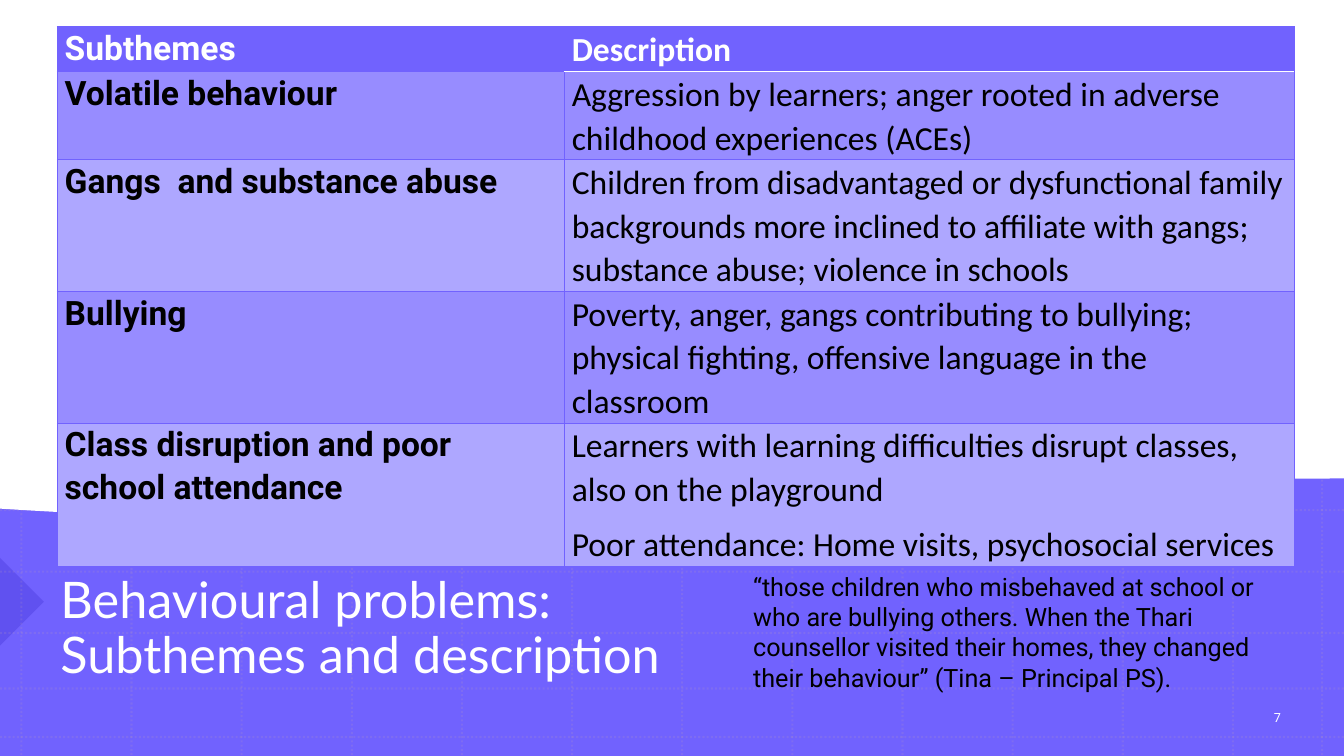
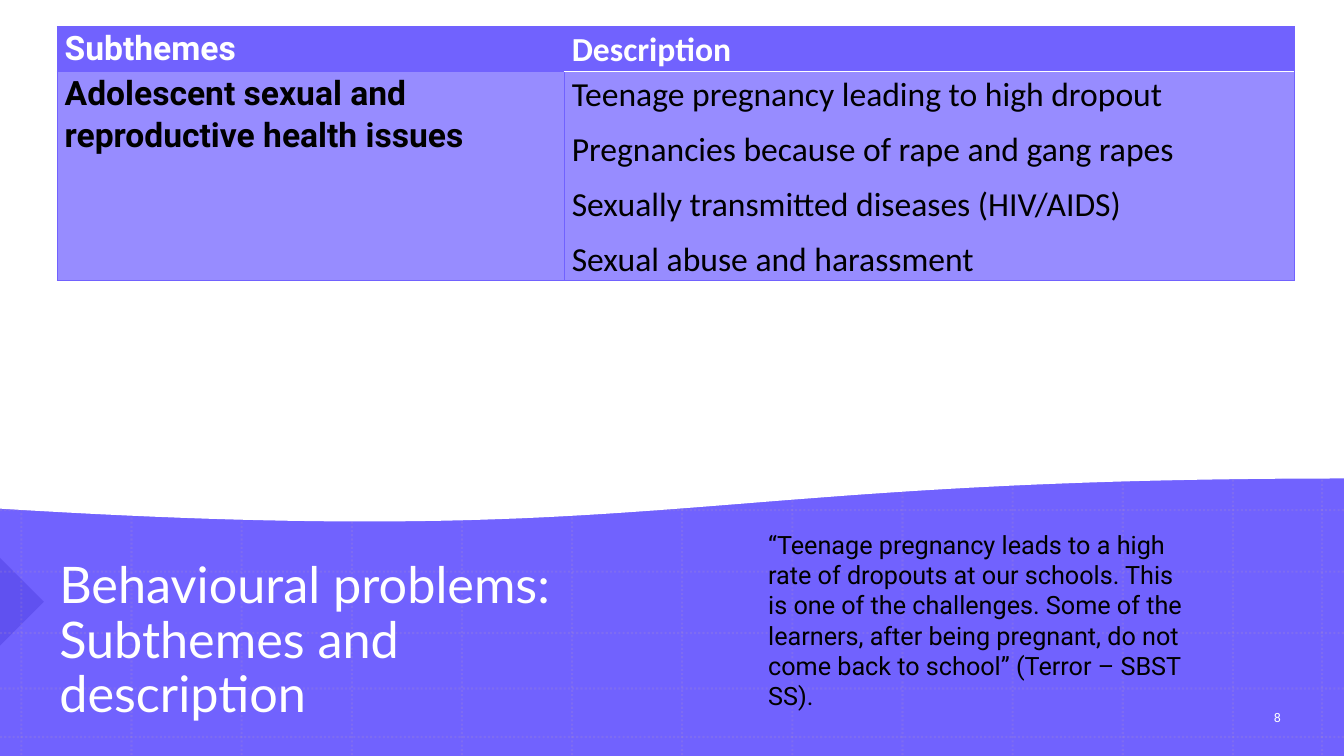
from lxml.etree import SubElement
from pptx import Presentation
from pptx.dml.color import RGBColor
from pptx.enum.dml import MSO_LINE
from pptx.enum.shapes import MSO_CONNECTOR, MSO_SHAPE
from pptx.enum.text import MSO_ANCHOR, MSO_AUTO_SIZE, PP_ALIGN
from pptx.oxml.ns import qn
from pptx.util import Cm, Pt

COLORS = {
    "purple": "7162FE",
    "dark_row": "978CFF",
    "light_row": "AEA7FF",
    "marker": "1201AF",
    "grid": "B495C2",
    "white": "FFFFFF",
    "black": "000000",
}
WIDTH, HEIGHT = 33.87, 19.05
WAVE = [(33.9, 12.04), (17.02, 12.04), (16.92, 13.84), (0, 12.8)]
WAVE_STEPS = 60
GRID_COLUMNS = [0.54 + 30.53 / 11 * i for i in range(12)] + [33.32]
GRID_ROWS = [0.48 + 15.47 / 10 * i for i in range(11)] + [17.35, 18.57]
COLUMN_WIDTHS = [12.78, 18.39]
HEADER_HEIGHT = 1.13

TITLE = ["Behavioural problems:", "Subthemes and description"]
HEADER = ["Subthemes", ["Description"]]

# Each row: subtheme, description paragraphs, height in cm
SLIDES = [
    {
        "number": 7,
        "title_box": (1.27, 13.66, 16.71, 4.42),
        "quote_box": (18.73, 14.27, 13.46, 3.33),
        "quote": "“those children who misbehaved at school or who are bullying others. "
                 "When the Thari counsellor visited their homes, they changed their "
                 "behaviour” (Tina – Principal PS).",
        "rows": [
            ("Volatile behaviour",
             ["Aggression by learners; anger rooted in adverse childhood "
              "experiences (ACEs)"], 2.22),
            ("Gangs  and substance abuse",
             ["Children from disadvantaged or dysfunctional family backgrounds more "
              "inclined to affiliate with gangs; substance abuse; violence in schools"], 3.32),
            ("Bullying",
             ["Poverty, anger, gangs contributing to bullying; physical fighting, "
              "offensive language in the classroom"], 3.32),
            ("Class disruption and poor school attendance",
             ["Learners with learning difficulties disrupt classes, also on the playground",
              "Poor attendance: Home visits, psychosocial services"], 3.6),
        ],
    },
    {
        "number": 8,
        "title_box": (1.24, 13.96, 14.99, 4.42),
        "quote_box": (19.11, 13.21, 10.97, 4.88),
        "quote": "“Teenage pregnancy leads to a high rate of dropouts at our schools. "
                 "This is one of the challenges. Some of the learners, after being "
                 "pregnant, do not come back to school” (Terror – SBST SS).",
        "rows": [
            ("Adolescent sexual and reproductive health issues",
             ["Teenage pregnancy leading to high dropout",
              "Pregnancies because of rape and gang rapes",
              "Sexually transmitted diseases (HIV/AIDS)",
              "Sexual abuse and harassment"], 5.27),
        ],
    },
]


def rgb(name):
    return RGBColor.from_string(COLORS[name])


def set_alpha(shape, percent):
    """Make the shape's only explicit colour partly opaque."""
    color = shape._element.spPr.find(".//" + qn("a:srgbClr"))
    SubElement(color, qn("a:alpha")).set("val", str(percent * 1000))


def fill_shape(shape, color):
    shape.shadow.inherit = False
    shape.fill.solid()
    shape.fill.fore_color.rgb = rgb(color)
    shape.line.fill.background()


def format_paragraph(paragraph, font_name, size, color, bold=False):
    font = paragraph.font
    font.name, font.size, font.bold = font_name, Pt(size), bold
    font.color.rgb = rgb(color)


def add_grid_line(slide, x1, y1, x2, y2):
    line = slide.shapes.add_connector(
        MSO_CONNECTOR.STRAIGHT, Cm(x1), Cm(y1), Cm(x2), Cm(y2))
    line.line.color.rgb = rgb("grid")
    line.line.width = Pt(1.5)
    line.line.dash_style = MSO_LINE.ROUND_DOT
    set_alpha(line, 20)
    SubElement(line._element.spPr, qn("a:effectLst"))


def wave_point(t):
    """Point of the cubic Bezier curve WAVE at t, from 0 to 1."""
    weights = [(1 - t) ** 3, 3 * t * (1 - t) ** 2, 3 * t ** 2 * (1 - t), t ** 3]
    return tuple(
        Cm(sum(weight * point[axis] for weight, point in zip(weights, WAVE)))
        for axis in (0, 1))


def add_white_wave(slide):
    builder = slide.shapes.build_freeform(0, 0)
    points = [wave_point(i / WAVE_STEPS) for i in range(WAVE_STEPS + 1)]
    builder.add_line_segments([(Cm(WAVE[0][0]), 0)] + points, close=True)
    wave = builder.convert_to_shape()
    fill_shape(wave, "white")
    wave.line.color.rgb = rgb("white")
    wave.line.width = Pt(1)


def draw_background(slide):
    band = slide.shapes.add_shape(
        MSO_SHAPE.RECTANGLE, 0, 0, Cm(WIDTH), Cm(HEIGHT))
    fill_shape(band, "purple")
    marker = slide.shapes.add_shape(
        MSO_SHAPE.RIGHT_TRIANGLE, Cm(-0.79), Cm(14.38), Cm(1.57), Cm(1.57))
    marker.rotation = 225
    fill_shape(marker, "marker")
    set_alpha(marker, 17)
    for x in GRID_COLUMNS:
        add_grid_line(slide, x, 0, x, HEIGHT)
    for y in GRID_ROWS:
        add_grid_line(slide, 0, y, WIDTH, y)
    add_white_wave(slide)


def move_to_layout(slide):
    """Move the background shapes behind the placeholders of the slide's layout."""
    layout_tree = slide.slide_layout.shapes._spTree
    shapes = [shape for shape in slide.shapes if not shape.is_placeholder]
    for index, shape in enumerate(shapes):
        layout_tree.insert(2 + index, shape._element)


def add_title(slide, box):
    title = slide.shapes.title
    title.left, title.top, title.width, title.height = map(Cm, box)
    frame = title.text_frame
    frame.auto_size = MSO_AUTO_SIZE.NONE
    frame.vertical_anchor = MSO_ANCHOR.MIDDLE
    paragraph = frame.paragraphs[0]
    paragraph.alignment = PP_ALIGN.LEFT
    paragraph.line_spacing = 0.9
    format_paragraph(paragraph, "Lato", 36, "white")
    paragraph.add_run().text = TITLE[0]
    paragraph.add_line_break()
    paragraph.add_run().text = TITLE[1]


def add_text(slide, box, text, size, color):
    frame = slide.shapes.add_textbox(*map(Cm, box)).text_frame
    frame.word_wrap = True
    frame.text = text
    format_paragraph(frame.paragraphs[0], "Roboto", size, color)
    return frame


def add_slide_number(slide, number):
    frame = add_text(slide, (31.09, 17.58, 2.21, 1.02), str(number), 9, "white")
    frame.vertical_anchor = MSO_ANCHOR.MIDDLE
    frame.paragraphs[0].alignment = PP_ALIGN.CENTER


def set_border(cell, edge, color, width):
    line = SubElement(cell._tc.get_or_add_tcPr(), qn("a:ln" + edge))
    line.set("w", str(Pt(width)))
    fill = SubElement(line, qn("a:solidFill"))
    SubElement(fill, qn("a:srgbClr")).set("val", COLORS[color])


def set_borders(cell, row, column):
    thin, thick, rule = ("purple", 0.5), ("purple", 1), ("white", 1)
    under_header = rule if column == 1 else thin
    set_border(cell, "L", *(thick if column == 1 else thin))
    set_border(cell, "R", *(thick if column == 0 else thin))
    set_border(cell, "T", *(under_header if row == 1 else thin))
    set_border(cell, "B", *(under_header if row == 0 else thin))


def fill_cell(cell, row, column, paragraphs):
    set_borders(cell, row, column)
    cell.fill.solid()
    row_color = "dark_row" if row % 2 else "light_row"
    cell.fill.fore_color.rgb = rgb("purple" if row == 0 else row_color)
    cell.margin_left = cell.margin_right = Cm(0.19)
    cell.margin_top = cell.margin_bottom = 0
    frame = cell.text_frame
    for index, text in enumerate(paragraphs):
        paragraph = frame.add_paragraph() if index else frame.paragraphs[0]
        paragraph.text = text
        paragraph.line_spacing = 1.07
        paragraph.space_after = Pt(8)
        format_paragraph(
            paragraph, "Calibri" if column else "Roboto", 24,
            "black" if row else "white", bold=row == 0 or column == 0)


def add_subtheme_table(slide, body_rows):
    rows = [(*HEADER, HEADER_HEIGHT)] + body_rows
    table = slide.shapes.add_table(
        len(rows), 2, Cm(1.44), Cm(0.67), Cm(sum(COLUMN_WIDTHS)),
        Cm(sum(row[2] for row in rows))).table
    table.horz_banding = False
    for column, width in zip(table.columns, COLUMN_WIDTHS):
        column.width = Cm(width)
    for index, (subtheme, description, height) in enumerate(rows):
        table.rows[index].height = Cm(height)
        fill_cell(table.cell(index, 0), index, 0, [subtheme])
        fill_cell(table.cell(index, 1), index, 1, description)


def main():
    presentation = Presentation()
    presentation.slide_width, presentation.slide_height = Cm(WIDTH), Cm(HEIGHT)
    layout = presentation.slide_layouts.get_by_name("Title Only")
    for index, content in enumerate(SLIDES):
        slide = presentation.slides.add_slide(layout)
        if index == 0:
            draw_background(slide)
            move_to_layout(slide)
        add_title(slide, content["title_box"])
        add_slide_number(slide, content["number"])
        add_subtheme_table(slide, content["rows"])
        add_text(slide, content["quote_box"], content["quote"], 18, "black")
    presentation.save("out.pptx")


if __name__ == "__main__":
    main()
